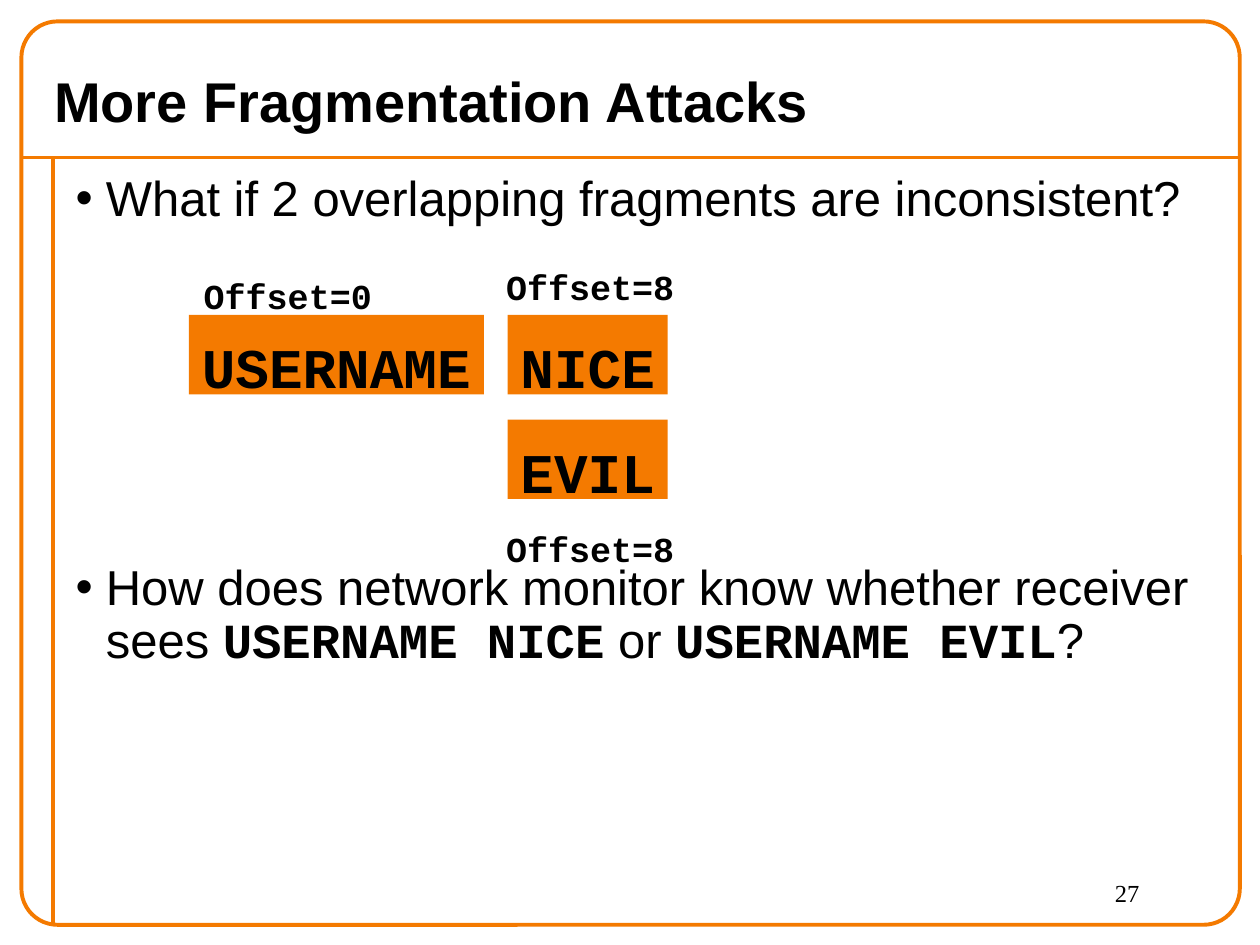
from pptx import Presentation
from pptx.dml.color import RGBColor
from pptx.enum.shapes import MSO_CONNECTOR, MSO_SHAPE
from pptx.enum.text import MSO_ANCHOR, MSO_AUTO_SIZE, PP_ALIGN
from pptx.oxml.ns import qn
from pptx.util import Inches, Pt
from lxml.etree import SubElement

COLORS = {"orange": "F47A00", "black": "000000"}
TITLE = "More Fragmentation Attacks"
BULLETS = [
    (0, [("What if 2 overlapping fragments are inconsistent?", "plain")]),
    (192, [
        ("How does network monitor know whether receiver sees ", "plain"),
        ("USERNAME NICE", "code"),
        (" or ", "plain"),
        ("USERNAME EVIL", "code"),
        ("?", "plain"),
    ]),
]
FRAGMENTS = [
    ("USERNAME", (1.5, 2.5, 2.34, 0.63), "Offset=0", (1.52, 2.07)),
    ("NICE", (4.03, 2.5, 1.27, 0.63), "Offset=8", (3.92, 2)),
    ("EVIL", (4.03, 3.33, 1.27, 0.63), "Offset=8", (3.92, 4.08)),
]
LABEL_SIZE = (1.53, 0.43)
PAGE_NUMBER = "27"
RULES = [(0.17, 1.25, 9.83, 1.25), (0.42, 1.25, 0.42, 7.33)]
FONTS = {
    "title": {"name": "Arial", "size": Pt(32), "bold": True},
    "plain": {"name": "Arial", "size": Pt(28), "bold": False},
    "code": {"name": "Courier New", "size": Pt(28), "bold": True},
    "fragment": {"name": "Courier New", "size": Pt(32), "bold": True},
    "label": {"name": "Courier New", "size": Pt(20), "bold": True},
    "number": {"name": "Times New Roman", "size": Pt(14), "bold": False},
}
CENTERED = {"alignment": PP_ALIGN.CENTER}
LEFT = {"alignment": PP_ALIGN.LEFT}


def color(name):
    return RGBColor.from_string(COLORS[name])


def apply(target, values):
    for name, value in values.items():
        setattr(target, name, value)


def place(shape, area):
    apply(shape, dict(zip(("left", "top", "width", "height"), map(Inches, area))))


def add_span(para, text, style):
    span = para.add_run()
    span.text = text
    apply(span.font, FONTS[style])
    span.font.color.rgb = color("black")


def write(shape, text, style, para_format, **frame_format):
    frame = shape.text_frame
    apply(frame, {"auto_size": MSO_AUTO_SIZE.NONE, **frame_format})
    para = frame.paragraphs[0]
    apply(para, para_format)
    add_span(para, text, style)


def add_frame(page):
    for rule in RULES:
        line = page.shapes.add_connector(MSO_CONNECTOR.STRAIGHT, *map(Inches, rule))
        apply(line.line, {"width": Pt(2.25)})
        line.line.color.rgb = color("orange")
        SubElement(line._element.spPr, qn("a:effectLst"))
    border = page.shapes.add_shape(
        MSO_SHAPE.ROUNDED_RECTANGLE, *map(Inches, (0.17, 0.17, 9.67, 7.17)))
    border.adjustments[0] = 0.04
    border.shadow.inherit = False
    border.fill.background()
    border.line.width = Pt(2.25)
    border.line.color.rgb = color("orange")


def add_bullets(body):
    frame = body.text_frame
    apply(frame, {"auto_size": MSO_AUTO_SIZE.NONE, "word_wrap": True})
    for index, (space, spans) in enumerate(BULLETS):
        para = frame.add_paragraph() if index else frame.paragraphs[0]
        apply(para, {"line_spacing": 0.9, "space_before": Pt(space), **LEFT})
        properties = para._p.get_or_add_pPr()
        properties.set("marL", str(Inches(0.24)))
        properties.set("indent", str(Inches(-0.24)))
        SubElement(properties, qn("a:buChar"), char="•")
        for text, style in spans:
            add_span(para, text, style)


def add_fragment(page, name, area, label, corner):
    box = page.shapes.add_shape(MSO_SHAPE.RECTANGLE, *map(Inches, area))
    box.shadow.inherit = False
    box.fill.solid()
    box.fill.fore_color.rgb = color("orange")
    box.line.fill.background()
    caption = page.shapes.add_textbox(*map(Inches, corner + LABEL_SIZE))
    for shape, text, style, margin in (
            (box, name, "fragment", 0.14), (caption, label, "label", 0.11)):
        write(shape, text, style, CENTERED, word_wrap=False,
              vertical_anchor=MSO_ANCHOR.TOP,
              margin_top=Inches(margin), margin_bottom=0)


def main():
    """Build the fragmentation attack slide."""
    deck = Presentation()
    apply(deck, {"slide_width": Inches(10), "slide_height": Inches(7.5)})
    page = deck.slides.add_slide(deck.slide_layouts[1])
    title, body = page.placeholders
    place(title, (0.33, 0.42, 9.5, 0.75))
    place(body, (0.5, 1.33, 9.25, 6))
    add_frame(page)
    write(title, TITLE, "title", LEFT, vertical_anchor=MSO_ANCHOR.MIDDLE)
    add_bullets(body)
    for fragment in FRAGMENTS:
        add_fragment(page, *fragment)
    number = page.shapes.add_textbox(*map(Inches, (8.75, 6.92, 1, 0.42)))
    write(number, PAGE_NUMBER, "number", LEFT, word_wrap=True)
    deck.save("out.pptx")


if __name__ == "__main__":
    main()
